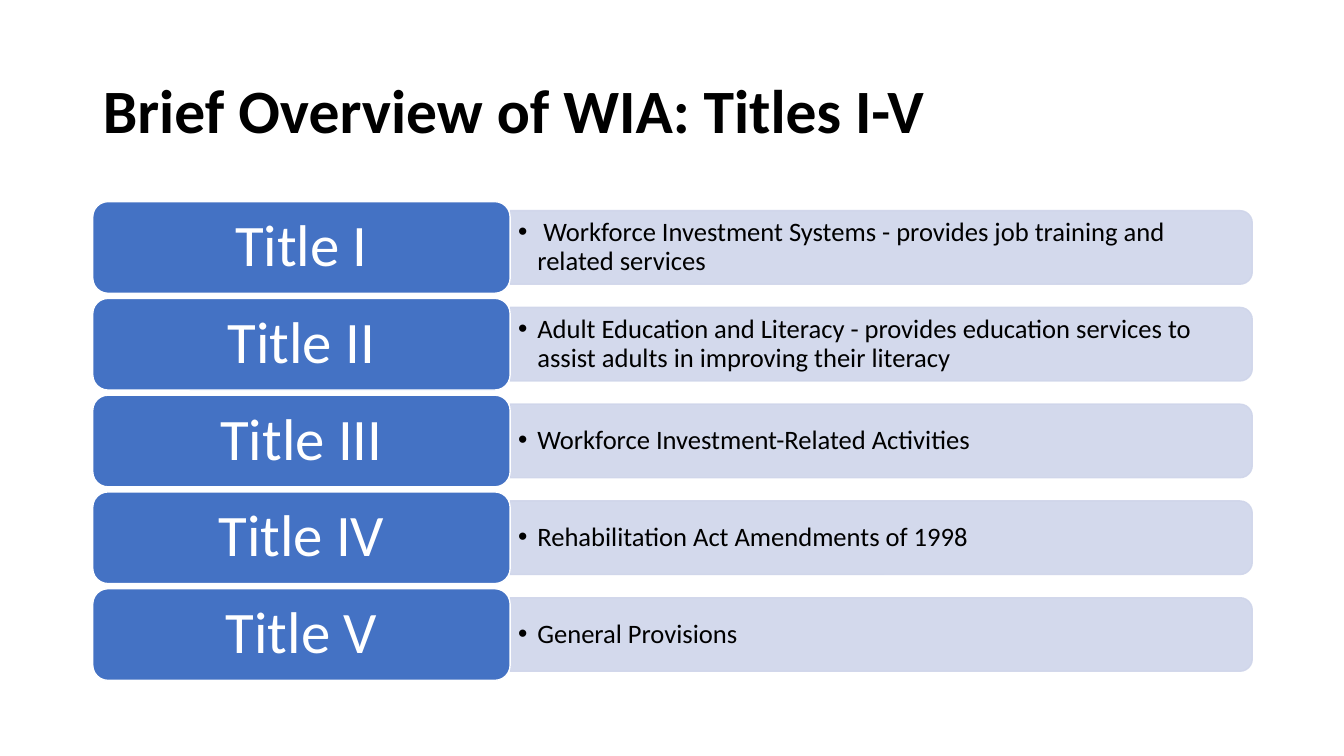
from lxml import etree
from pptx import Presentation
from pptx import util as u
from pptx.dml.color import RGBColor
from pptx.enum import shapes, text
from pptx.oxml.ns import qn

WIDTH, HEIGHT = 13.33, 7.5
LEFT, TOP = 0.92, 2
BADGE_WIDTH, PANEL_WIDTH = 4.14, 7.36
ROW_HEIGHT, ROW_PITCH = 0.91, 0.96
PANEL_HEIGHT = 0.73
BLACK, WHITE, BLUE, PALE = "000000", "FFFFFF", "4472C4", "CFD5EA"

TITLES = [
    ("Title I", " Workforce Investment Systems - provides job training and related services"),
    ("Title II", "Adult Education and Literacy - provides education services to "
                 "assist adults in improving their literacy"),
    ("Title III", "Workforce Investment-Related Activities"),
    ("Title IV", "Rehabilitation Act Amendments of 1998"),
    ("Title V", "General Provisions"),
]


def paint(color_format, hex_color, opacity=100):
    color_format.rgb = RGBColor.from_string(hex_color)
    if opacity < 100:
        for srgb in color_format._xFill.iter(qn("a:srgbClr")):
            etree.SubElement(srgb, qn("a:alpha"), val=str(opacity * 1000))


def write(holder, wording, size, color=BLACK, bold=False, align="LEFT",
          insets=(0.1, 0.05), bullet=False):
    frame = holder.text_frame
    frame.word_wrap = True
    frame.auto_size = text.MSO_AUTO_SIZE.NONE
    frame.vertical_anchor = text.MSO_ANCHOR.MIDDLE
    frame.margin_left = frame.margin_right = u.Inches(insets[0])
    frame.margin_top = frame.margin_bottom = u.Inches(insets[1])
    paragraph = frame.paragraphs[0]
    paragraph.alignment = getattr(text.PP_ALIGN, align)
    paragraph.line_spacing = 0.9
    run = paragraph.add_run()
    run.text = wording
    run.font.name = "Calibri"
    run.font.size = u.Pt(size)
    run.font.bold = bold
    paint(run.font.color, color)
    if bullet:
        paragraph.level = 1
        properties = paragraph._p.get_or_add_pPr()
        properties.set("marL", str(u.Inches(0.19)))
        properties.set("indent", str(-u.Inches(0.19)))
        etree.SubElement(properties, qn("a:buFont"), typeface="Arial")
        etree.SubElement(properties, qn("a:buChar"), char="•")


def block(slide, preset, box, fill, line, opacity=100):
    shape = slide.shapes.add_shape(preset, *map(u.Inches, box))
    shape.shadow.inherit = False
    shape.fill.solid()
    paint(shape.fill.fore_color, fill, opacity)
    shape.line.width = u.Pt(1)
    paint(shape.line.color, line, opacity)
    return shape


def heading(slide, wording):
    title = slide.shapes.title
    title.left, title.top = u.Inches(LEFT), u.Inches(0.4)
    title.width, title.height = u.Inches(BADGE_WIDTH + PANEL_WIDTH), u.Inches(1.45)
    write(title, wording, 44, bold=True)


def panel(slide, middle, description):
    left = LEFT + BADGE_WIDTH
    upright = (left + (PANEL_WIDTH - PANEL_HEIGHT) / 2, middle - PANEL_WIDTH / 2,
               PANEL_HEIGHT, PANEL_WIDTH)
    backing = block(slide, shapes.MSO_SHAPE.ROUND_2_SAME_RECTANGLE, upright, PALE, PALE, 90)
    backing.rotation = 90
    area = (left, middle - 0.33, PANEL_WIDTH - 0.04, 0.66)
    write(slide.shapes.add_textbox(*map(u.Inches, area)), description, 19,
          insets=(0.08, 0.04), bullet=True)


def badge(slide, top, name):
    box = (LEFT, top, BADGE_WIDTH, ROW_HEIGHT)
    shape = block(slide, shapes.MSO_SHAPE.ROUNDED_RECTANGLE, box, BLUE, WHITE)
    write(shape, name, 42, WHITE, align="CENTER", insets=(0.17, 0.09))


def main():
    deck = Presentation()
    deck.slide_width, deck.slide_height = u.Inches(WIDTH), u.Inches(HEIGHT)
    slide = deck.slides.add_slide(deck.slide_layouts[5])
    heading(slide, "Brief Overview of WIA: Titles I-V")
    for row, (name, description) in enumerate(TITLES):
        top = TOP + row * ROW_PITCH
        panel(slide, top + ROW_HEIGHT / 2, description)
        badge(slide, top, name)
    deck.save("out.pptx")


if __name__ == "__main__":
    main()
